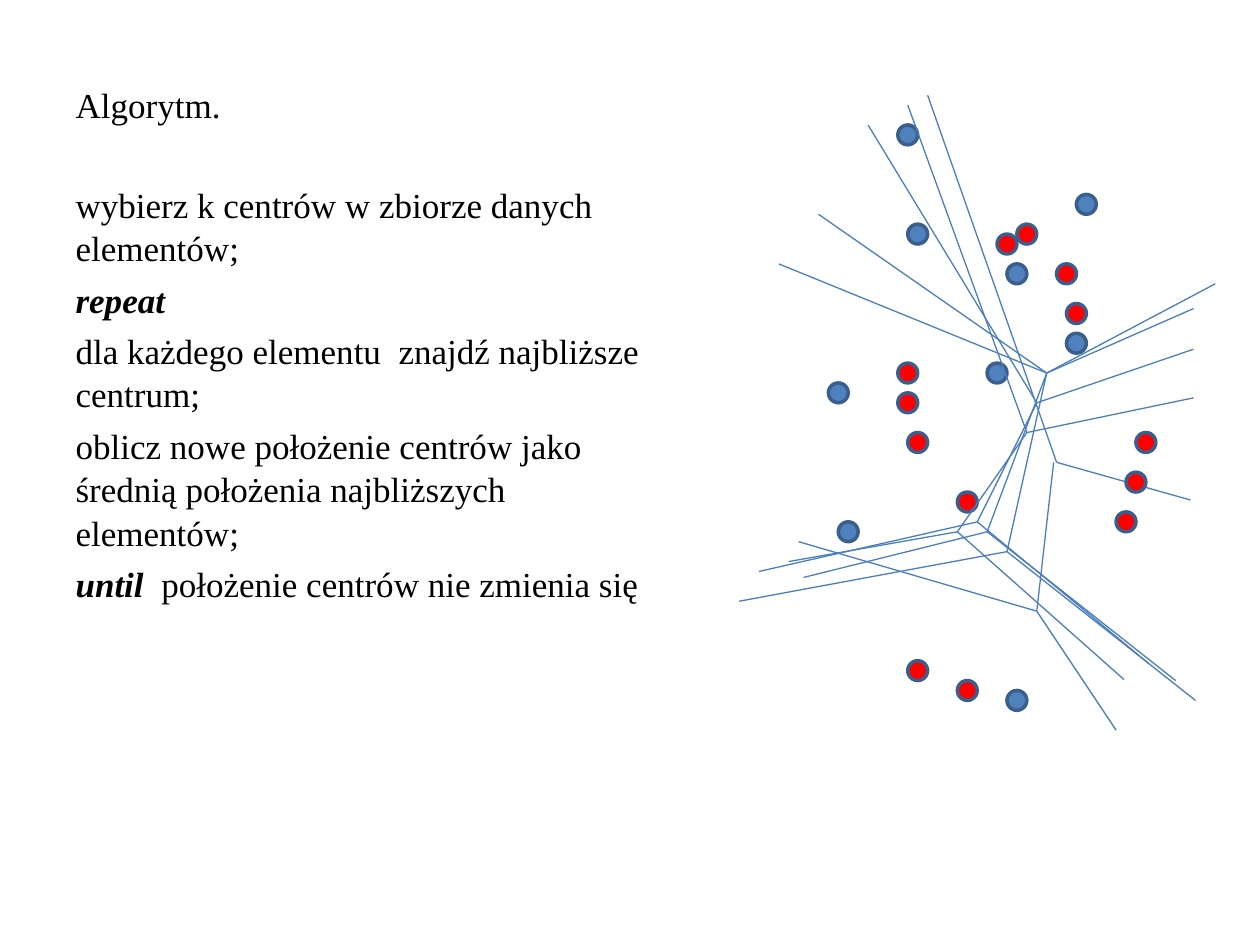
from typing import NamedTuple

from lxml import etree
from pptx import Presentation
from pptx.dml.color import RGBColor
from pptx.enum.shapes import MSO_CONNECTOR, MSO_SHAPE
from pptx.enum.text import MSO_AUTO_SIZE
from pptx.oxml.ns import qn
from pptx.util import Inches, Mm, Pt

OVAL = MSO_SHAPE.OVAL
STRAIGHT = MSO_CONNECTOR.STRAIGHT
NO_AUTOFIT = MSO_AUTO_SIZE.NONE

COLORS = {
    "text": "000000",
    "center": "4F81BD",
    "element": "FF0000",
    "outline": "3A5F8C",
    "boundary": "4B7EBC",
}
PLAIN = {"name": "Times New Roman", "size": Pt(20), "bold": False, "italic": False}
KEYWORD = {**PLAIN, "bold": True, "italic": True}

GRID_LEFT, GRID_TOP, GRID_STEP = 1, 1.2, 2  # millimetres
DOT_CELLS = 2
PARAGRAPH_GAP, HEADING_GAP = Pt(4.3), Pt(32)


class Cell(NamedTuple):
    col: float
    row: float


class Dot(NamedTuple):
    kind: str
    col: int
    row: int


class Boundary(NamedTuple):
    """Two forks, each a node with two open ends, joined by a stem."""
    upper: Cell
    upper_ends: tuple
    lower: Cell
    lower_ends: tuple
    stem_top: Cell


class Step(NamedTuple):
    runs: tuple
    gap: int = PARAGRAPH_GAP


STEPS = [
    Step((("Algorytm.", PLAIN),)),
    Step((("wybierz k centrów w zbiorze danych elementów;", PLAIN),), HEADING_GAP),
    Step((("repeat", KEYWORD),)),
    Step((("dla każdego elementu  znajdź najbliższe centrum;", PLAIN),)),
    Step((("oblicz nowe położenie centrów jako średnią położenia "
           "najbliższych elementów;", PLAIN),)),
    Step((("until ", KEYWORD), (" położenie centrów nie zmienia się", PLAIN))),
]

DIAGRAM = [
    Dot("element", 107, 30), Dot("center", 90, 12), Dot("center", 91, 22),
    Dot("center", 83, 38), Dot("element", 90, 36), Dot("element", 102, 22),
    Dot("center", 101, 26), Dot("center", 107, 33), Dot("center", 99, 36),
    Dot("element", 96, 68), Dot("center", 84, 52), Dot("center", 108, 19),
    Dot("center", 101, 69), Dot("element", 91, 66), Dot("element", 96, 49),
    Dot("element", 114, 43), Dot("element", 112, 51), Dot("element", 91, 43),
    Boundary(Cell(106, 46), (Cell(119.5, 49.8), Cell(93, 9)),
             Cell(104, 61), (Cell(80, 54), Cell(112, 73)), Cell(105.7, 46)),
    Boundary(Cell(103, 43), (Cell(91, 10), Cell(119.8, 39.5)),
             Cell(96, 53), (Cell(112.8, 67.9), Cell(79, 56)), Cell(103, 43)),
    Dot("element", 90, 39), Dot("element", 113, 47), Dot("element", 106, 26),
    Boundary(Cell(104, 40), (Cell(119.8, 34.6), Cell(87, 12)),
             Cell(98, 52), (Cell(115.3, 66.3), Cell(76, 57)), Cell(104, 40)),
    Boundary(Cell(105, 37), (Cell(82, 21), Cell(119.8, 30.5)),
             Cell(99, 53), (Cell(80.5, 57.6), Cell(118, 68)), Cell(105, 37)),
    Dot("element", 100, 23),
    Boundary(Cell(105, 37), (Cell(78, 26), Cell(122, 28)),
             Cell(101, 55), (Cell(74, 60), Cell(120, 70)), Cell(105, 37)),
]


def rgb(name: str) -> RGBColor:
    return RGBColor.from_string(COLORS[name])


def grid_point(col: float, row: float) -> tuple:
    return Mm(GRID_LEFT + GRID_STEP * col), Mm(GRID_TOP + GRID_STEP * row)


def draw_dot(shapes, dot: Dot) -> None:
    size = Mm(DOT_CELLS * GRID_STEP)
    sp = shapes.add_shape(OVAL, *grid_point(dot.col, dot.row), size, size)
    sp.shadow.inherit = False
    sp.fill.solid()
    sp.fill.fore_color.rgb = rgb(dot.kind)
    sp.line.color.rgb = rgb("outline")
    sp.line.width = Pt(2)


def draw_line(shapes, start: Cell, end: Cell) -> None:
    line = shapes.add_connector(STRAIGHT, *grid_point(*start), *grid_point(*end))
    line.line.color.rgb = rgb("boundary")
    line.line.width = Pt(0.75)
    etree.SubElement(line._element.spPr, qn("a:effectLst"))


def draw_boundary(shapes, boundary: Boundary) -> None:
    group = shapes.add_group_shape().shapes
    draw_line(group, boundary.stem_top, boundary.lower)
    for end in boundary.upper_ends:
        draw_line(group, boundary.upper, end)
    for end in boundary.lower_ends:
        draw_line(group, boundary.lower, end)


def write_step(p, step: Step) -> None:
    p.space_before = step.gap
    p.line_spacing = 1.04
    pPr = p._p.get_or_add_pPr()
    pPr.set("marL", "0")
    pPr.set("indent", "0")
    etree.SubElement(pPr, qn("a:buNone"))
    for text, formats in step.runs:
        r = p.add_run()
        r.text = text
        for name, value in formats.items():
            setattr(r.font, name, value)
        r.font.color.rgb = rgb("text")


def write_algorithm(body) -> None:
    body.left, body.top = Inches(0.5), Inches(0.6)
    body.width, body.height = Inches(4.74), Inches(6.3)
    tf = body.text_frame
    tf.auto_size = NO_AUTOFIT
    tf.word_wrap = True
    for i, step in enumerate(STEPS):
        write_step(tf.add_paragraph() if i else tf.paragraphs[0], step)


def main() -> None:
    prs = Presentation()
    prs.slide_width, prs.slide_height = Inches(10), Inches(7.5)
    slide = prs.slides.add_slide(prs.slide_layouts[1])
    title = slide.shapes.title._element
    title.getparent().remove(title)
    write_algorithm(slide.placeholders[1])
    for item in DIAGRAM:
        draw = draw_dot if isinstance(item, Dot) else draw_boundary
        draw(slide.shapes, item)
    prs.save("out.pptx")


if __name__ == "__main__":
    main()
